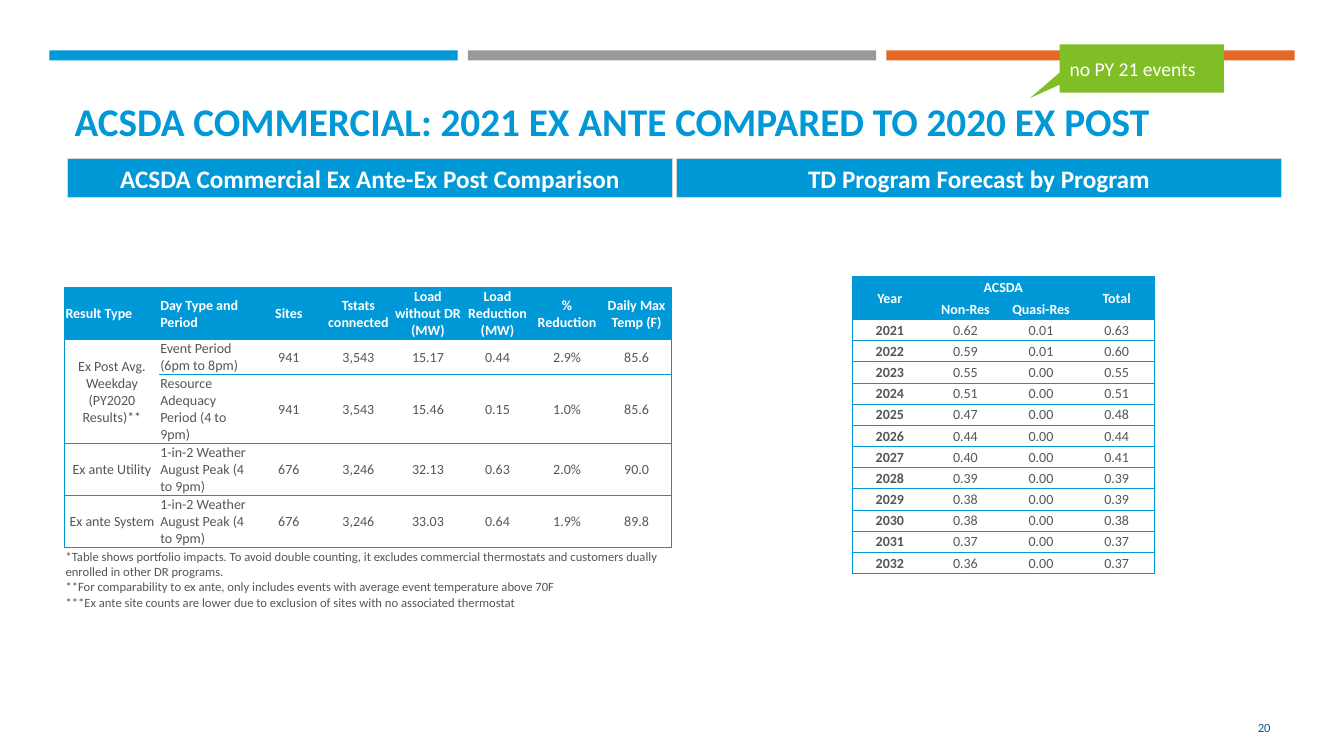
import copy
import dataclasses

import pptx
import pptx.dml.color
import pptx.enum.shapes
import pptx.enum.text
import pptx.oxml
import pptx.oxml.ns
import pptx.util

Inches = pptx.util.Inches
Pt = pptx.util.Pt
Align = pptx.enum.text.PP_ALIGN
Anchor = pptx.enum.text.MSO_ANCHOR
Preset = pptx.enum.shapes.MSO_SHAPE


@dataclasses.dataclass(frozen=True)
class Theme:
    font: str = "Calibri"
    blue: str = "0098D7"
    orange: str = "E66827"
    gray: str = "999999"
    green: str = "80BE25"
    navy: str = "005F8C"
    white: str = "FFFFFF"
    body: str = "565656"
    outline: str = "D8D8D8"
    title_size: float = 28
    heading_size: float = 18
    callout_size: float = 14
    table_size: float = 10
    note_size: float = 9


THEME = Theme()
NO_TABLE_STYLE = "{2D5ABB26-0587-4C30-8999-92F81FD0307C}"

COMPARISON = [
    ["Result Type", "Day Type and Period", "Sites", "Tstats connected",
     "Load without DR (MW)", "Load Reduction (MW)", "% Reduction", "Daily Max Temp (F)"],
    ["Ex Post Avg. Weekday (PY2020 Results)**", "Event Period (6pm to 8pm)",
     "941", "3,543", "15.17", "0.44", "2.9%", "85.6"],
    [None, "Resource Adequacy Period (4 to 9pm)",
     "941", "3,543", "15.46", "0.15", "1.0%", "85.6"],
    ["Ex ante Utility", "1-in-2 Weather August Peak (4 to 9pm)",
     "676", "3,246", "32.13", "0.63", "2.0%", "90.0"],
    ["Ex ante System", "1-in-2 Weather August Peak (4 to 9pm)",
     "676", "3,246", "33.03", "0.64", "1.9%", "89.8"],
    ["*Table shows portfolio impacts. To avoid double counting, it excludes commercial "
     "thermostats and customers dually enrolled in other DR programs.\n"
     "**For comparability to ex ante, only includes events with average event "
     "temperature above 70F\n"
     "***Ex ante site counts are lower due to exclusion of sites with no associated "
     "thermostat"] + [None] * 7,
]

FORECAST = [
    ["Year", "ACSDA", None, "Total"],
    [None, "Non-Res", "Quasi-Res", None],
    ["2021", "0.62", "0.01", "0.63"],
    ["2022", "0.59", "0.01", "0.60"],
    ["2023", "0.55", "0.00", "0.55"],
    ["2024", "0.51", "0.00", "0.51"],
    ["2025", "0.47", "0.00", "0.48"],
    ["2026", "0.44", "0.00", "0.44"],
    ["2027", "0.40", "0.00", "0.41"],
    ["2028", "0.39", "0.00", "0.39"],
    ["2029", "0.38", "0.00", "0.39"],
    ["2030", "0.38", "0.00", "0.38"],
    ["2031", "0.37", "0.00", "0.37"],
    ["2032", "0.36", "0.00", "0.37"],
]


def rgb(color):
    return pptx.dml.color.RGBColor.from_string(color)


def write_text(text_frame, text, *, size, color, bold=False, align=Align.LEFT):
    """Write one paragraph; newlines become line breaks of the same size."""
    paragraph = text_frame.paragraphs[0]
    paragraph.text = text
    paragraph.alignment = align
    for run in paragraph.runs:
        run.font.name = THEME.font
        run.font.size = Pt(size)
        run.font.bold = bold
        run.font.color.rgb = rgb(color)
    for line_break in paragraph._p.findall(pptx.oxml.ns.qn("a:br")):
        line_break.append(copy.deepcopy(paragraph.runs[0]._r.rPr))


def place(shape, left, top, width, height):
    shape.left, shape.top = Inches(left), Inches(top)
    shape.width, shape.height = Inches(width), Inches(height)


def add_block(slide, box, fill, preset=Preset.RECTANGLE, outline=None):
    shape = slide.shapes.add_shape(preset, *map(Inches, box))
    shape.shadow.inherit = False
    shape.fill.solid()
    shape.fill.fore_color.rgb = rgb(fill)
    if outline:
        shape.line.color.rgb = rgb(outline)
        shape.line.width = Pt(1)
    else:
        shape.line.fill.background()
    shape.text_frame.word_wrap = True
    shape.text_frame.vertical_anchor = Anchor.MIDDLE
    return shape


def add_heading(slide, left, text):
    heading = add_block(slide, (left, 1.57, 6, 0.39), THEME.blue, outline=THEME.outline)
    heading.text_frame.margin_top = heading.text_frame.margin_bottom = Inches(0.04)
    write_text(heading.text_frame, text, size=THEME.heading_size, color=THEME.white,
               bold=True, align=Align.CENTER)


def set_borders(cell, widths):
    """Draw cell borders; widths maps L, R, T and B, in that order, to points."""
    properties = cell._tc.get_or_add_tcPr()
    for side, width in widths.items():
        properties.append(pptx.oxml.parse_xml(
            f'<a:ln{side} {pptx.oxml.ns.nsdecls("a")} w="{Pt(width)}"><a:solidFill>'
            f'<a:srgbClr val="{THEME.blue}"/></a:solidFill></a:ln{side}>'))


def add_table(slide, left, top, column_widths, row_heights, merges):
    size = (sum(column_widths), sum(row_heights))
    table = slide.shapes.add_table(len(row_heights), len(column_widths),
                                   *map(Inches, (left, top, *size))).table
    table.first_row = table.horz_banding = False
    table._tbl.tblPr.find(pptx.oxml.ns.qn("a:tableStyleId")).text = NO_TABLE_STYLE
    for column, width in zip(table.columns, column_widths):
        column.width = Inches(width)
    for row, height in zip(table.rows, row_heights):
        row.height = Inches(height)
    for first, last in merges:
        table.cell(*first).merge(table.cell(*last))
    return table


def fill_cell(cell, text, borders, header=False, **text_format):
    set_borders(cell, borders)
    cell.margin_left = cell.margin_right = cell.margin_top = Inches(0.01)
    cell.margin_bottom = 0
    cell.vertical_anchor = Anchor.MIDDLE
    if header:
        cell.fill.solid()
        cell.fill.fore_color.rgb = rgb(THEME.blue)
    else:
        cell.fill.background()
    if text is not None:
        write_text(cell.text_frame, text, **text_format)


def fill_table(table, rows, header_rows, left_cells, bold_years=False, note_row=None):
    last_column = len(rows[0]) - 1
    for row, texts in enumerate(rows):
        header, note = row < header_rows, row == note_row
        for column, text in enumerate(texts):
            borders = {"T": 1} if note else {"T": 0.5, "B": 1 if row + 1 == note_row else 0.5}
            if column == 0 and not note:
                borders = {"L": 0.5, **borders}
            if column == last_column and not note:
                borders = {"R": 0.5, **borders}
            fill_cell(table.cell(row, column), text, borders, header,
                      size=THEME.note_size if note else THEME.table_size,
                      color=THEME.white if header else THEME.body,
                      bold=header or (bold_years and column == 0),
                      align=Align.LEFT if left_cells(row, column) else Align.CENTER)


def main():
    presentation = pptx.Presentation()
    presentation.slide_width, presentation.slide_height = Inches(13.33), Inches(7.5)
    slide = presentation.slides.add_slide(presentation.slide_layouts[5])

    # Colour bars along the top
    for index, color in enumerate((THEME.blue, THEME.gray, THEME.orange)):
        add_block(slide, (0.49 + index * 4.15, 0.5, 4.05, 0.1), color)

    # Title and section headings
    title = slide.shapes.title
    place(title, 0.64, 0.77, 12.06, 0.71)
    title.text_frame.vertical_anchor = Anchor.BOTTOM
    write_text(title.text_frame, "ACSDA COMMERCIAL: 2021 EX ANTE COMPARED TO 2020 EX POST",
               size=THEME.title_size, color=THEME.blue, bold=True)
    add_heading(slide, 0.67, "ACSDA Commercial Ex Ante-Ex Post Comparison")
    add_heading(slide, 6.71, "TD Program Forecast by Program")

    # Forecast by year
    forecast = add_table(slide, 8.45, 2.74, [0.75] * 4, [0.22] + [0.21] * 13,
                         [((0, 0), (1, 0)), ((0, 1), (0, 2)), ((0, 3), (1, 3))])
    fill_table(forecast, FORECAST, 2, lambda row, column: False, bold_years=True)

    # Ex ante and ex post comparison, with its notes in the last row
    comparison = add_table(slide, 0.64, 2.85, [0.94] * 2 + [0.69] * 6,
                           [0.51, 0.34, 0.65, 0.51, 0.52, 0.63],
                           [((1, 0), (2, 0)), ((5, 0), (5, 7))])
    fill_table(comparison, COMPARISON, 1,
               lambda row, column: column == 1 or (column == 0 and row in (0, 5)), note_row=5)

    # Callout and slide number
    callout = add_block(slide, (10.51, 0.44, 1.63, 0.48), THEME.green,
                        Preset.RECTANGULAR_CALLOUT)
    callout.adjustments[0], callout.adjustments[1] = -0.68, 0.61
    write_text(callout.text_frame, "no PY 21 events", size=THEME.callout_size,
               color=THEME.white)
    number = slide.shapes.add_textbox(*map(Inches, (11.55, 7.02, 1.15, 0.4)))
    number.text_frame.word_wrap = True
    number.text_frame.vertical_anchor = Anchor.MIDDLE
    write_text(number.text_frame, "20", size=THEME.note_size, color=THEME.navy,
               align=Align.RIGHT)

    presentation.save("out.pptx")


if __name__ == "__main__":
    main()
